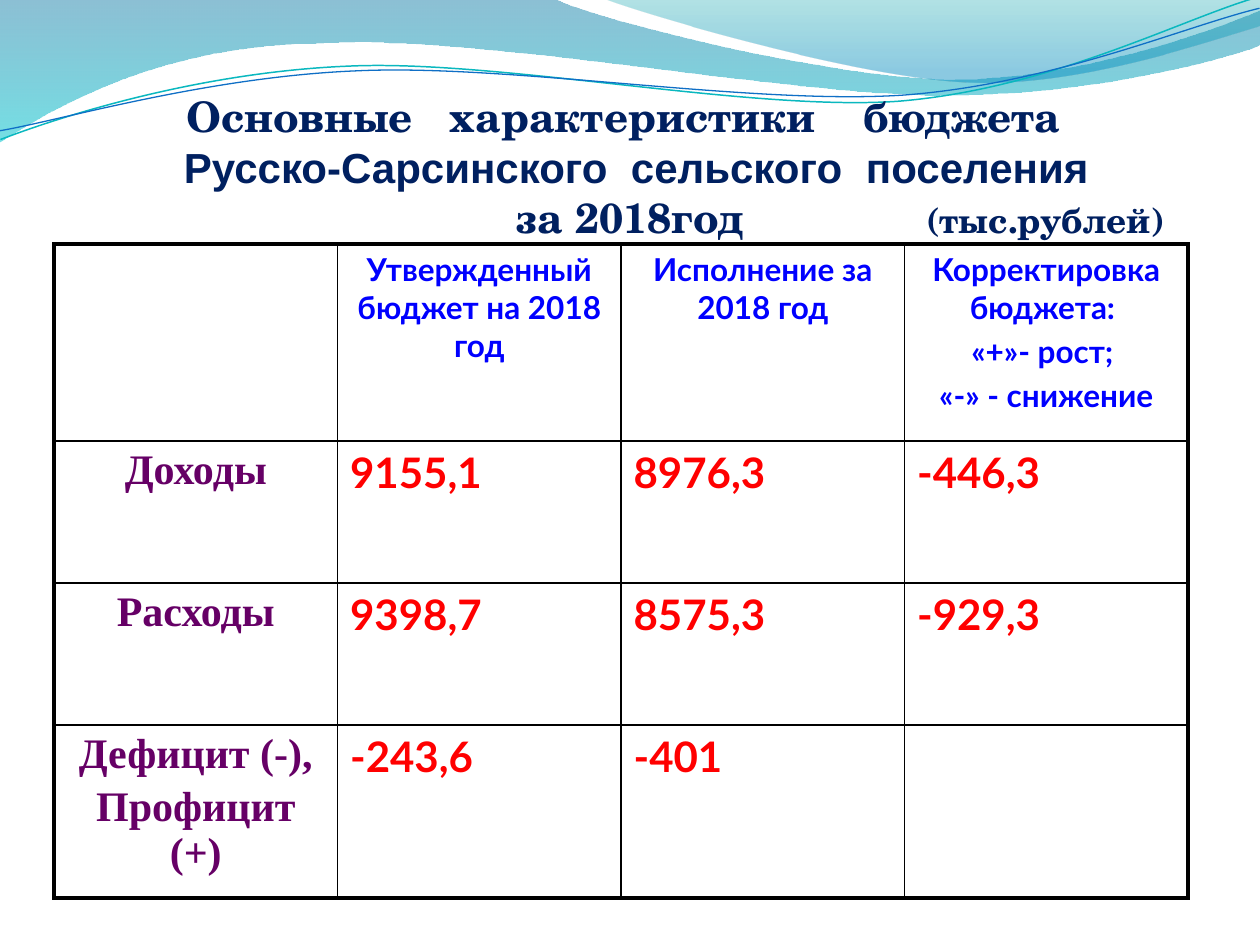
from lxml.etree import SubElement
from pptx import Presentation
from pptx.dml.color import RGBColor
from pptx.enum.text import MSO_ANCHOR, PP_ALIGN
from pptx.oxml.ns import qn
from pptx.util import Pt

PX = 914400 / 126
NAVY, BLUE, PURPLE, RED, BLACK = "002060", "0000FF", "660066", "FF0000", "000000"
SCHOLA = "TeX Gyre Schola"

# A pair is a straight step, six numbers are a cubic curve.
WAVES = [
    ([(0, -1), (554, -1), (600, 21, 837, 79, 955, 79), (1075, 79, 1207, 33, 1260, 11),
      (1261, 45), (1239, 55, 1096, 96, 940, 95), (784, 95, 481, 35, 324, 43),
      (163, 44, 58, 105, -1, 142)], [(0, "0074A1", 45), (1, "00C6CF", 55)]),
    ([(604, -1), (641, 14, 859, 78, 969, 82), (1079, 87, 1211, 40, 1260, 26),
      (1260, 0)], [(0, "00A1A9", 30), (0.8, "008BBF", 45)]),
]
WAVE_LINES = [
    ([(-2, 110), (58, 90, 199, 52, 349, 53), (499, 53, 745, 117, 896, 114),
      (1049, 109, 1184, 45, 1260, 27)], "0AB8BF", 0.85),
    ([(-2, 101), (57, 94, 207, 57, 357, 58), (509, 58, 750, 111, 902, 108),
      (1052, 104, 1188, 52, 1262, 38)], "0F6FC6", 0.75),
]
LINE_ROTATION = 357.3
# Each title line: font, then (left, text, size) of each part.
TITLE = [
    (SCHOLA, [(123, "Основные", 24), (387, "характеристики", 24), (800, "бюджета", 24)]),
    ("Arial", [(121, "Русско-Сарсинского", 24), (568, "сельского", 24),
               (803, "поселения", 24)]),
    (SCHOLA, [(454, "за 2018год", 24), (863, "(тыс.рублей)", 20)]),
]
ROW_HEIGHTS = [197, 142, 142, 173]
ROWS = [
    ["", "Утвержденный бюджет на 2018 год", "Исполнение за 2018 год",
     "Корректировка бюджета: \n«+»- рост; \n«-» - снижение"],
    ["Доходы", "9155,1", "8976,3", "-446,3"],
    ["Расходы", "9398,7", "8575,3", "-929,3"],
    ["Дефицит (-),\nПрофицит (+)", "-243,6", "-401", ""],
]


def px(n):
    return round(n * PX)


def rgb(color):
    return RGBColor.from_string(color)


def set_font(font, name, size, color):
    font.name, font.size, font.bold = name, Pt(size), True
    font.color.rgb = rgb(color)


def add_outline(s, steps, close):
    """Build a freeform, then merge the three points of each curve into one Bézier."""
    points = [step[i:i + 2] for step in steps for i in range(0, len(step), 2)]
    builder = s.shapes.build_freeform(*points[0], scale=PX)
    builder.add_line_segments(points[1:], close=close)
    sp = builder.convert_to_shape()
    sp.shadow.inherit = False
    segments = iter(list(sp._element.iter(qn("a:lnTo"))))
    for step in steps[1:]:
        first = next(segments)
        if len(step) == 6:
            curve = first.makeelement(qn("a:cubicBezTo"), {})
            first.addprevious(curve)
            for segment in (first, next(segments), next(segments)):
                curve.append(segment[0])
                segment.getparent().remove(segment)
    return sp


def add_waves(s):
    for steps, stops in WAVES:
        sp = add_outline(s, steps, True)
        sp.line.fill.background()
        sp.fill.gradient()
        sp.fill.gradient_angle = 270
        for stop, (position, color, alpha) in zip(sp.fill.gradient_stops, stops):
            stop.position = position
            stop.color.rgb = rgb(color)
            clr = stop.color._xFill.find(qn("a:srgbClr"))
            SubElement(clr, qn("a:alpha"), val=str(alpha * 1000))
    for steps, color, width in WAVE_LINES:
        sp = add_outline(s, steps, False)
        sp.rotation = LINE_ROTATION
        sp.fill.background()
        sp.line.color.rgb = rgb(color)
        sp.line.width = Pt(width)


def add_title(s, x, y, w, h):
    title = s.shapes.title
    s.shapes._spTree.append(title._element)  # in front of the waves
    title.left, title.top, title.width, title.height = map(px, (x, y, w, h))
    tf = title.text_frame
    tf.word_wrap = True
    tf.vertical_anchor = MSO_ANCHOR.BOTTOM
    tf.margin_left = tf.margin_right = tf.margin_bottom = 0
    for i, (font, parts) in enumerate(TITLE):
        p = tf.add_paragraph() if i else tf.paragraphs[0]
        p.alignment = PP_ALIGN.LEFT
        tabs = SubElement(p._p.get_or_add_pPr(), qn("a:tabLst"))
        for left, text, size in parts:
            SubElement(tabs, qn("a:tab"), pos=str(px(left)), algn="l")
            r = p.add_run()
            r.text = "\t" + text
            set_font(r.font, font, size, NAVY)


def set_borders(cell, widths):
    tcPr = cell._tc.get_or_add_tcPr()
    for i, (side, width) in enumerate(widths.items()):
        ln = tcPr.makeelement(qn("a:ln" + side), {"w": str(Pt(width))})
        fill = SubElement(ln, qn("a:solidFill"))
        SubElement(fill, qn("a:srgbClr"), val=BLACK)
        tcPr.insert(i, ln)


def cell_style(row, col):
    """Font, size, colour and alignment by place in the table."""
    if row == 0:
        return "Lato", 18, BLUE, PP_ALIGN.CENTER
    if col == 0:
        return "Times New Roman", 24, PURPLE, PP_ALIGN.CENTER
    return "Lato", 24, RED, PP_ALIGN.LEFT


def add_budget_table(s, x, y, w):
    n_rows, n_cols = len(ROWS), len(ROWS[0])
    table = s.shapes.add_table(n_rows, n_cols, px(x), px(y), px(w),
                               px(sum(ROW_HEIGHTS))).table
    table.first_row = table.horz_banding = False
    for i, (height, texts) in enumerate(zip(ROW_HEIGHTS, ROWS)):
        table.rows[i].height = px(height)
        for j, text in enumerate(texts):
            cell = table.cell(i, j)
            cell.fill.background()
            outer = {"L": j == 0, "R": j == n_cols - 1, "T": i == 0, "B": i == n_rows - 1}
            set_borders(cell, {k: 2.25 if edge else 1 for k, edge in outer.items()})
            if not text:
                continue
            font, size, color, align = cell_style(i, j)
            cell.text_frame.text = text
            for k, p in enumerate(cell.text_frame.paragraphs):
                p.alignment = align
                if k:
                    p.space_before = Pt(3.6)
                for r in p.runs:
                    set_font(r.font, font, size, color)


def main():
    prs = Presentation()
    prs.slide_width, prs.slide_height = px(1260), px(945)
    s = prs.slides.add_slide(prs.slide_layouts[5])
    add_waves(s)
    add_title(s, 63, 53, 1134, 189)
    add_budget_table(s, 54, 244, 1134)
    prs.save("out.pptx")


if __name__ == "__main__":
    main()
